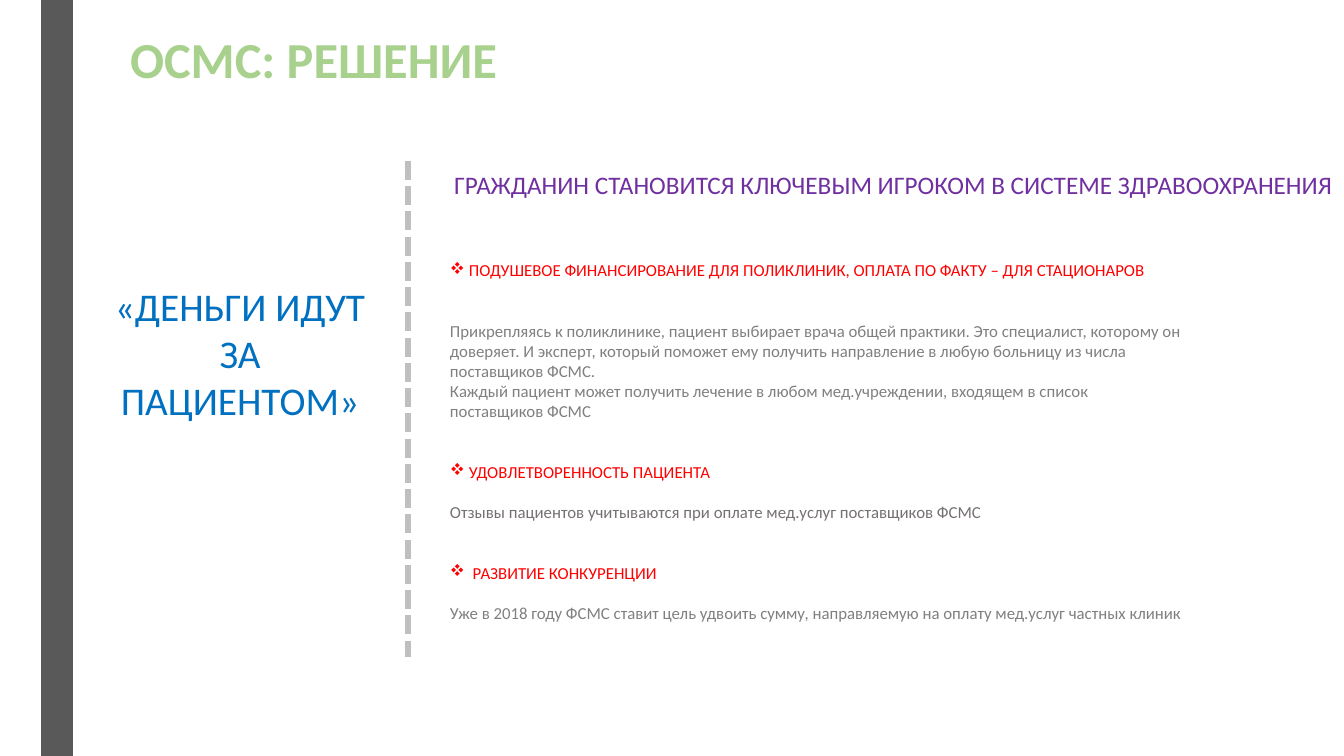
"""Builds the slide on how health insurance money follows the patient."""
from lxml.etree import SubElement
from pptx import Presentation
from pptx.dml.color import RGBColor
from pptx.enum.dml import MSO_LINE
from pptx.enum.shapes import MSO_CONNECTOR, MSO_SHAPE
from pptx.enum.text import MSO_ANCHOR, MSO_AUTO_SIZE, PP_ALIGN
from pptx.oxml.ns import qn
from pptx.util import Pt

PX = 914400 * 10 // 1008
BLANK_LINE = 14.4
BULLET_INDENT = 19
RED, GREY, DARK_GREY = "FF0000", "808080", "767171"


def colour(hex_string):
    return RGBColor.from_string(hex_string)


def write(box, place, paragraphs, size, **formats):
    box.left, box.top, box.width, box.height = (length * PX for length in place)
    frame = box.text_frame
    settings = {
        "word_wrap": True,
        "auto_size": MSO_AUTO_SIZE.NONE,
        "vertical_anchor": MSO_ANCHOR.TOP,
        "margin_left": 10 * PX,
        "margin_right": 10 * PX,
        "margin_top": 5 * PX,
        "margin_bottom": 5 * PX,
    } | formats
    bold = settings.pop("bold", False)
    align = settings.pop("align", PP_ALIGN.LEFT)
    for key, value in settings.items():
        setattr(frame, key, value)
    for index, (text, hex_string, blank_lines, bulleted) in enumerate(paragraphs):
        paragraph = frame.add_paragraph() if index else frame.paragraphs[0]
        paragraph.alignment = align
        paragraph.space_before = Pt(blank_lines * BLANK_LINE)
        run = paragraph.add_run()
        run.text = text
        for key, value in {"name": "Calibri", "size": Pt(size), "bold": bold}.items():
            setattr(run.font, key, value)
        run.font.color.rgb = colour(hex_string)
        if bulleted:
            properties = paragraph._p.get_or_add_pPr()
            properties.set("marL", str(BULLET_INDENT * PX))
            properties.set("indent", str(-BULLET_INDENT * PX))
            SubElement(properties, qn("a:buFont"), typeface="Wingdings")
            SubElement(properties, qn("a:buChar"), char="v")


presentation = Presentation()
presentation.slide_width, presentation.slide_height = 1344 * PX, 756 * PX
slide = presentation.slides.add_slide(presentation.slide_layouts[5])
shapes = slide.shapes

side_band = shapes.add_shape(MSO_SHAPE.RECTANGLE, 42 * PX, 0, 30 * PX, 756 * PX)
side_band.shadow.inherit = False
side_band.fill.solid()
side_band.fill.fore_color.rgb = colour("595959")
side_band.line.color.rgb = colour("595959")
side_band.line.width = Pt(1)

write(shapes.title, (120, 23, 1157, 71), [("ОСМС: РЕШЕНИЕ", "A9D18E", 0, False)], 36, bold=True)

divider = shapes.add_connector(MSO_CONNECTOR.STRAIGHT, 408 * PX, 161 * PX, 408 * PX, 657 * PX)
divider.line.color.rgb = colour("BFBFBF")
divider.line.width = Pt(4.5)
divider.line.dash_style = MSO_LINE.SQUARE_DOT
SubElement(divider._element.spPr, qn("a:effectLst"))

motto = [("«ДЕНЬГИ ИДУТ ЗА ПАЦИЕНТОМ»", "0070C0", 0, False)]
write(shapes.add_textbox(0, 0, 0, 0), (98, 277, 284, 183), motto, 28, align=PP_ALIGN.CENTER)

benefits = [
    ("ПОДУШЕВОЕ ФИНАНСИРОВАНИЕ ДЛЯ ПОЛИКЛИНИК, ОПЛАТА ПО ФАКТУ – ДЛЯ СТАЦИОНАРОВ", RED, 0, True),
    ("Прикрепляясь к поликлинике, пациент выбирает врача общей практики. Это специалист, "
     "которому он доверяет. И эксперт, который поможет ему получить направление в любую "
     "больницу из числа поставщиков ФСМС.", GREY, 2, False),
    ("Каждый пациент может получить лечение в любом мед.учреждении, входящем в список "
     "поставщиков ФСМС", GREY, 0, False),
    ("УДОВЛЕТВОРЕННОСТЬ ПАЦИЕНТА", RED, 2, True),
    ("Отзывы пациентов учитываются при оплате мед.услуг поставщиков ФСМС", DARK_GREY, 1, False),
    (" РАЗВИТИЕ КОНКУРЕНЦИИ", RED, 2, True),
    ("Уже в 2018 году ФСМС ставит цель удвоить сумму, направляемую на оплату мед.услуг "
     "частных клиник", GREY, 1, False),
]
write(shapes.add_textbox(0, 0, 0, 0), (440, 235, 752, 448), benefits, 12, margin_top=25 * PX)

headline = [("ГРАЖДАНИН СТАНОВИТСЯ КЛЮЧЕВЫМ ИГРОКОМ В СИСТЕМЕ ЗДРАВООХРАНЕНИЯ", "7030A0", 0, False)]
write(shapes.add_textbox(0, 0, 0, 0), (444, 164, 906, 72), headline, 18, word_wrap=False)

presentation.save("out.pptx")
